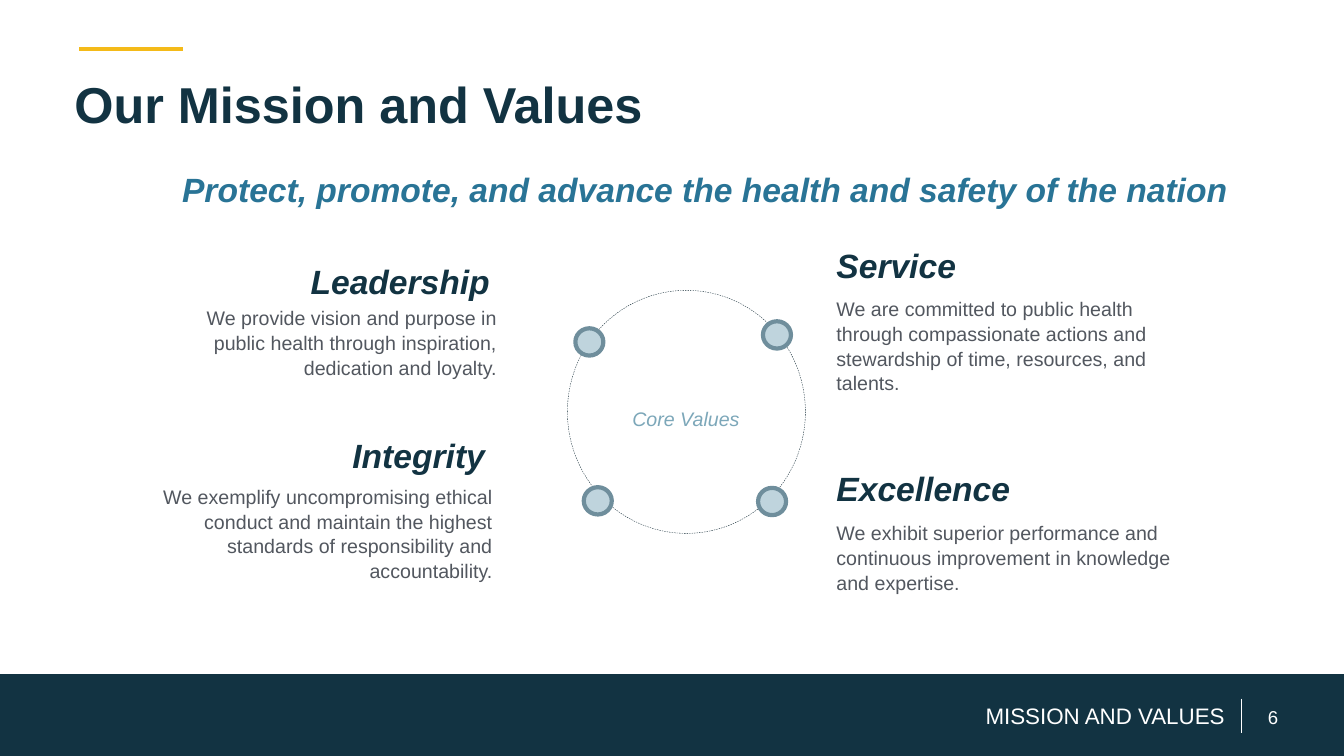
from dataclasses import dataclass

from lxml.etree import SubElement
from pptx import Presentation
from pptx.dml.color import RGBColor
from pptx.enum.dml import MSO_LINE
from pptx.enum.shapes import MSO_CONNECTOR, MSO_SHAPE
from pptx.enum.text import MSO_ANCHOR, MSO_AUTO_SIZE, PP_ALIGN
from pptx.oxml.ns import qn
from pptx.slide import Slide
from pptx.text.text import TextFrame
from pptx.util import Pt

NAVY = RGBColor(0x12, 0x33, 0x42)
BLUE = RGBColor(0x29, 0x74, 0x96)
GRAY = RGBColor(0x52, 0x57, 0x5F)
GOLD = RGBColor(0xF4, 0xBA, 0x18)
WHITE = RGBColor(0xFF, 0xFF, 0xFF)
MIST = RGBColor(0xBF, 0xD4, 0xDD)
STEEL = RGBColor(0x6F, 0x8E, 0x9C)
PALE = RGBColor(0x7C, 0xA7, 0xB9)
INK = RGBColor(0x0D, 0x26, 0x31)

WIDE, HIGH = 960, 540
BAR_TOP = 481.5
DOT_W, DOT_H = 20, 19.5


@dataclass
class Box:
    left: float
    top: float
    width: float
    height: float


@dataclass
class Style:
    size: float
    color: RGBColor
    bold: bool = False
    slant: bool = False
    space: float = 1.05


@dataclass
class Value:
    name: str
    text: str
    head: Box
    body: Box
    align: PP_ALIGN


HEAD = Style(24, NAVY, True, True)
BODY = Style(14, GRAY)
LEFT, RIGHT, MID = PP_ALIGN.LEFT, PP_ALIGN.RIGHT, PP_ALIGN.CENTER

VALUES = [
    Value("Leadership",
          "We provide vision and purpose in public health through inspiration, "
          "dedication and loyalty.",
          Box(100, 181.5, 257, 36), Box(100, 214.5, 262, 58.5), RIGHT),
    Value("Integrity",
          "We exemplify uncompromising ethical conduct and maintain the highest "
          "standards of responsibility and accountability.",
          Box(82, 306, 271.5, 36), Box(82, 342, 277, 75), RIGHT),
    Value("Service",
          "We are committed to public health through compassionate actions and "
          "stewardship of time, resources, and talents.",
          Box(590.4, 170, 266.5, 36), Box(590.4, 208, 277, 58.5), LEFT),
    Value("Excellence",
          "We exhibit superior performance and continuous improvement in "
          "knowledge and expertise.",
          Box(590.4, 329, 277, 36), Box(590.4, 368, 277, 58.5), LEFT),
]

DOTS = [(411, 234.5), (545, 229.5), (417, 348), (541.5, 348.5)]


def write(frame: TextFrame, text: str, style: Style, align: PP_ALIGN,
          anchor: MSO_ANCHOR = MSO_ANCHOR.TOP) -> None:
    frame.word_wrap = True
    frame.auto_size = MSO_AUTO_SIZE.NONE
    frame.vertical_anchor = anchor
    para = frame.paragraphs[0]
    para.text = text
    para.alignment = align
    para.line_spacing = style.space
    font = para.font
    font.name = "Arial"
    font.size = Pt(style.size)
    font.bold = style.bold
    font.italic = style.slant
    font.color.rgb = style.color


def label(slide: Slide, box: Box, text: str, style: Style, align: PP_ALIGN,
          anchor: MSO_ANCHOR = MSO_ANCHOR.TOP) -> None:
    shape = slide.shapes.add_textbox(
        Pt(box.left), Pt(box.top), Pt(box.width), Pt(box.height))
    write(shape.text_frame, text, style, align, anchor)


def rule(slide: Slide, start: tuple[float, float], end: tuple[float, float],
         color: RGBColor, width: float) -> None:
    line = slide.shapes.add_connector(
        MSO_CONNECTOR.STRAIGHT, Pt(start[0]), Pt(start[1]), Pt(end[0]), Pt(end[1]))
    line.line.color.rgb = color
    line.line.width = Pt(width)
    SubElement(line._element.spPr, qn("a:effectLst"))


def solid(slide: Slide, kind: MSO_SHAPE, box: Box, fill: RGBColor | None = None,
          edge: RGBColor | None = None, width: float = 0,
          dash: MSO_LINE | None = None) -> None:
    shape = slide.shapes.add_shape(
        kind, Pt(box.left), Pt(box.top), Pt(box.width), Pt(box.height))
    shape.shadow.inherit = False
    if fill is None:
        shape.fill.background()
    else:
        shape.fill.solid()
        shape.fill.fore_color.rgb = fill
    if edge is None:
        shape.line.fill.background()
    else:
        shape.line.color.rgb = edge
        shape.line.width = Pt(width)
        if dash is not None:
            shape.line.dash_style = dash


def frame(slide: Slide) -> None:
    rule(slide, (56.5, 35), (131, 35), GOLD, 2.5)
    solid(slide, MSO_SHAPE.RECTANGLE, Box(0, BAR_TOP, WIDE, HIGH - BAR_TOP), NAVY)
    label(slide, Box(881, 502, 56.5, 20), "6", Style(13.3, WHITE, space=1),
          MID, MSO_ANCHOR.MIDDLE)
    rule(slide, (887, 499), (887, 523.5), WHITE, 0.75)
    label(slide, Box(569, 499, 313, 24), "MISSION AND VALUES",
          Style(16, WHITE, space=1), RIGHT, MSO_ANCHOR.MIDDLE)


def wheel(slide: Slide) -> None:
    solid(slide, MSO_SHAPE.OVAL, Box(405.3, 207.4, 170, 173.6),
          edge=INK, width=0.25, dash=MSO_LINE.DASH)
    for left, top in DOTS:
        solid(slide, MSO_SHAPE.OVAL, Box(left, top, DOT_W, DOT_H), MIST, STEEL, 3)
    label(slide, Box(426, 286, 128, 24.5), "Core Values",
          Style(14, PALE, slant=True), MID)


def main() -> None:
    deck = Presentation()
    deck.slide_width, deck.slide_height = Pt(WIDE), Pt(HIGH)
    slide = deck.slides.add_slide(deck.slide_layouts[5])
    title = slide.shapes.title
    title.left, title.top = Pt(46), Pt(44)
    title.width, title.height = Pt(864), Pt(77)
    write(title.text_frame, "Our Mission and Values",
          Style(36, NAVY, True, space=1.1), LEFT)
    frame(slide)
    label(slide, Box(123, 116, 788, 36),
          "Protect, promote, and advance the health and safety of the nation",
          Style(24, BLUE, True, True), LEFT)
    for value in VALUES:
        label(slide, value.head, value.name, HEAD, value.align)
        label(slide, value.body, value.text, BODY, value.align)
    wheel(slide)
    deck.save("out.pptx")


if __name__ == "__main__":
    main()
